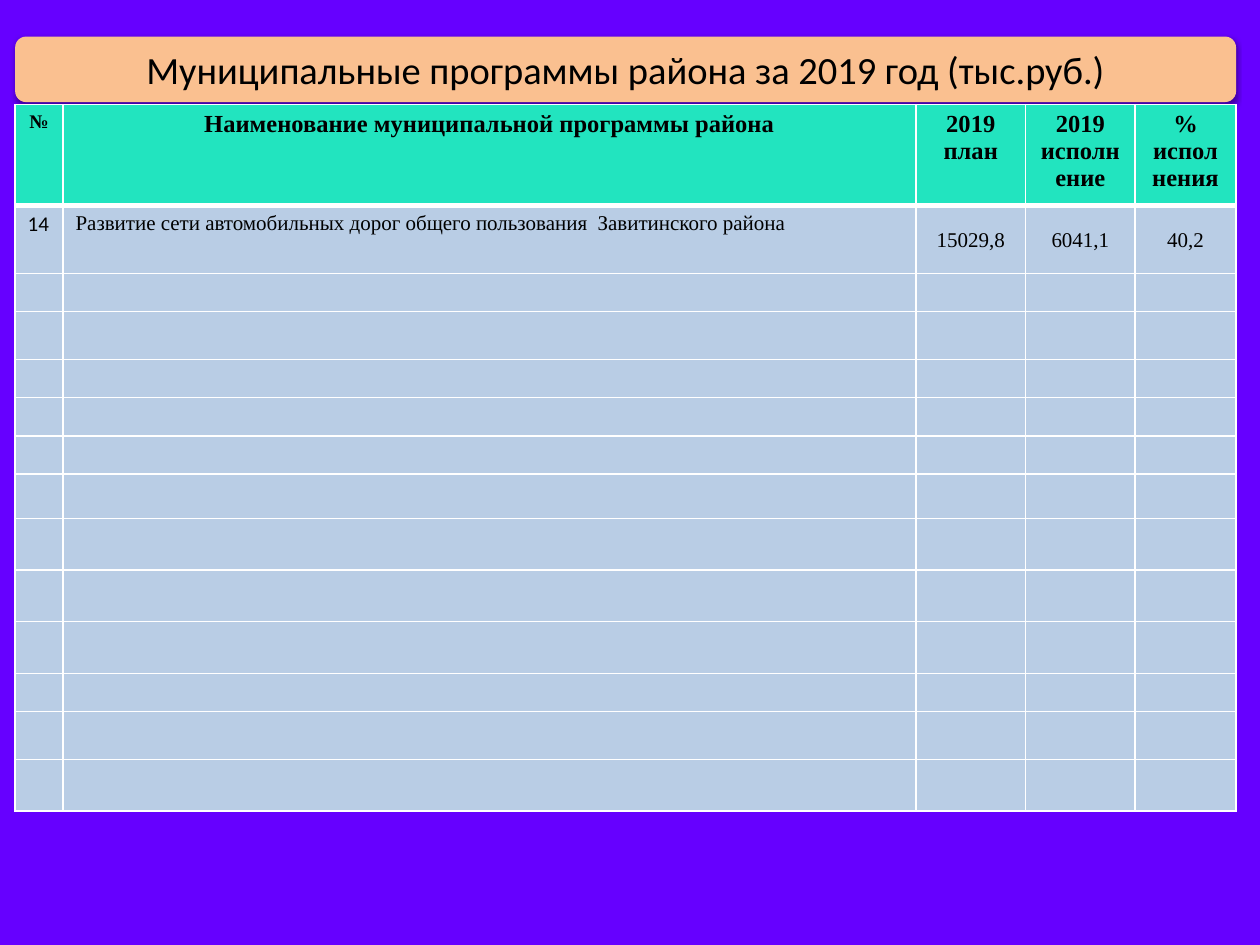
from lxml import etree
from pptx import Presentation
from pptx.dml.color import RGBColor
from pptx.enum.shapes import MSO_SHAPE
from pptx.enum.text import MSO_ANCHOR, PP_ALIGN
from pptx.oxml.ns import qn
from pptx.util import Inches, Pt

ROUNDED = MSO_SHAPE.ROUNDED_RECTANGLE
MIDDLE = MSO_ANCHOR.MIDDLE
CENTER = PP_ALIGN.CENTER
LEFT = PP_ALIGN.LEFT
SERIF = "Times New Roman"
SANS = "Calibri"
BLACK = "000000"
WHITE = "FFFFFF"
HEADER_FILL = "22E4BF"
BODY_FILL = "B9CDE5"

COLUMN_WIDTHS = [0.38, 6.77, 0.87, 0.87, 0.8]
ROW_HEIGHTS = [0.8, 0.54, 0.3, 0.38, 0.3, 0.3, 0.3,
               0.35, 0.41, 0.41, 0.41, 0.3, 0.38, 0.41]
HEADINGS = ["№", "Наименование муниципальной программы района",
            "2019 план", "2019 исполнение", "% исполнения"]
PROGRAM = ["14", "Развитие сети автомобильных дорог общего пользования  Завитинского района",
           "15029,8", "6041,1", "40,2"]


def color(value):
    """Turn a hex string into a colour."""
    return RGBColor.from_string(value)


def paint(fill, value):
    """Make a fill solid in one colour."""
    fill.solid()
    fill.fore_color.rgb = color(value)


def write(text_frame, text, size, font, alignment, bold=False):
    """Write one run into the first paragraph."""
    paragraph = text_frame.paragraphs[0]
    paragraph.alignment = alignment
    run = paragraph.add_run()
    run.text = text
    run.font.size = Pt(size)
    run.font.name = font
    run.font.bold = bold
    run.font.color.rgb = color(BLACK)


def add_soft_shadow(shape):
    """Give a shape a soft shadow falling downwards."""
    shape.shadow.inherit = False
    effects = shape._element.spPr.find(qn("a:effectLst"))
    shadow = etree.SubElement(effects, qn("a:outerShdw"), blurRad=str(Pt(3.1)),
                              dist=str(Pt(1.6)), dir="5400000", rotWithShape="0")
    shade = etree.SubElement(shadow, qn("a:srgbClr"), val=BLACK)
    etree.SubElement(shade, qn("a:alpha"), val="38000")


def set_borders(cell, bottom_width):
    """Draw white borders around a cell."""
    properties = cell._tc.get_or_add_tcPr()
    widths = {"a:lnL": 1, "a:lnR": 1, "a:lnT": 1, "a:lnB": bottom_width}
    for position, (tag, width) in enumerate(widths.items()):
        line = etree.Element(qn(tag), w=str(Pt(width)))
        fill = etree.SubElement(line, qn("a:solidFill"))
        etree.SubElement(fill, qn("a:srgbClr"), val=WHITE)
        properties.insert(position, line)


def add_title(slide, left, top, width, height):
    """Place the rounded title bar."""
    shape = slide.shapes.add_shape(ROUNDED, Inches(left), Inches(top),
                                   Inches(width), Inches(height))
    paint(shape.fill, "FAC090")
    shape.line.fill.background()
    add_soft_shadow(shape)
    shape.text_frame.word_wrap = True
    shape.text_frame.vertical_anchor = MIDDLE
    write(shape.text_frame, "Муниципальные программы района за 2019 год (тыс.руб.)",
          22, SANS, CENTER)


def fill_header_cell(cell, column):
    """Write a column heading."""
    write(cell.text_frame, HEADINGS[column], 14 if column else 11, SERIF, CENTER, True)


def fill_program_cell(cell, column):
    """Write one value of the programme row."""
    is_amount = column > 1
    if is_amount:
        cell.vertical_anchor = MIDDLE
        cell.margin_left = cell.margin_right = cell.margin_top = Inches(0.01)
        cell.margin_bottom = 0
    write(cell.text_frame, PROGRAM[column], 12, SERIF if column else SANS,
          CENTER if is_amount else LEFT)


def add_program_table(slide, left, top, width, height):
    """Place the table of programmes with its empty rows."""
    table = slide.shapes.add_table(len(ROW_HEIGHTS), len(COLUMN_WIDTHS), Inches(left),
                                   Inches(top), Inches(width), Inches(height)).table
    for column, column_width in zip(table.columns, COLUMN_WIDTHS):
        column.width = Inches(column_width)
    for row_index, row_height in enumerate(ROW_HEIGHTS):
        row = table.rows[row_index]
        row.height = Inches(row_height)
        for column_index, cell in enumerate(row.cells):
            paint(cell.fill, BODY_FILL if row_index else HEADER_FILL)
            set_borders(cell, 1 if row_index else 3)
            if row_index == 0:
                fill_header_cell(cell, column_index)
            elif row_index == 1:
                fill_program_cell(cell, column_index)
            else:
                cell.text_frame.paragraphs[0].font.size = Pt(12)


def main():
    """Build and save the presentation."""
    presentation = Presentation()
    presentation.slide_width = Inches(10)
    presentation.slide_height = Inches(7.5)
    slide = presentation.slides.add_slide(presentation.slide_layouts[6])
    paint(slide.background.fill, "6600FF")
    add_title(slide, 0.12, 0.29, 9.69, 0.52)
    add_program_table(slide, 0.12, 0.83, 9.69, 5.59)
    presentation.save("out.pptx")


if __name__ == "__main__":
    main()
